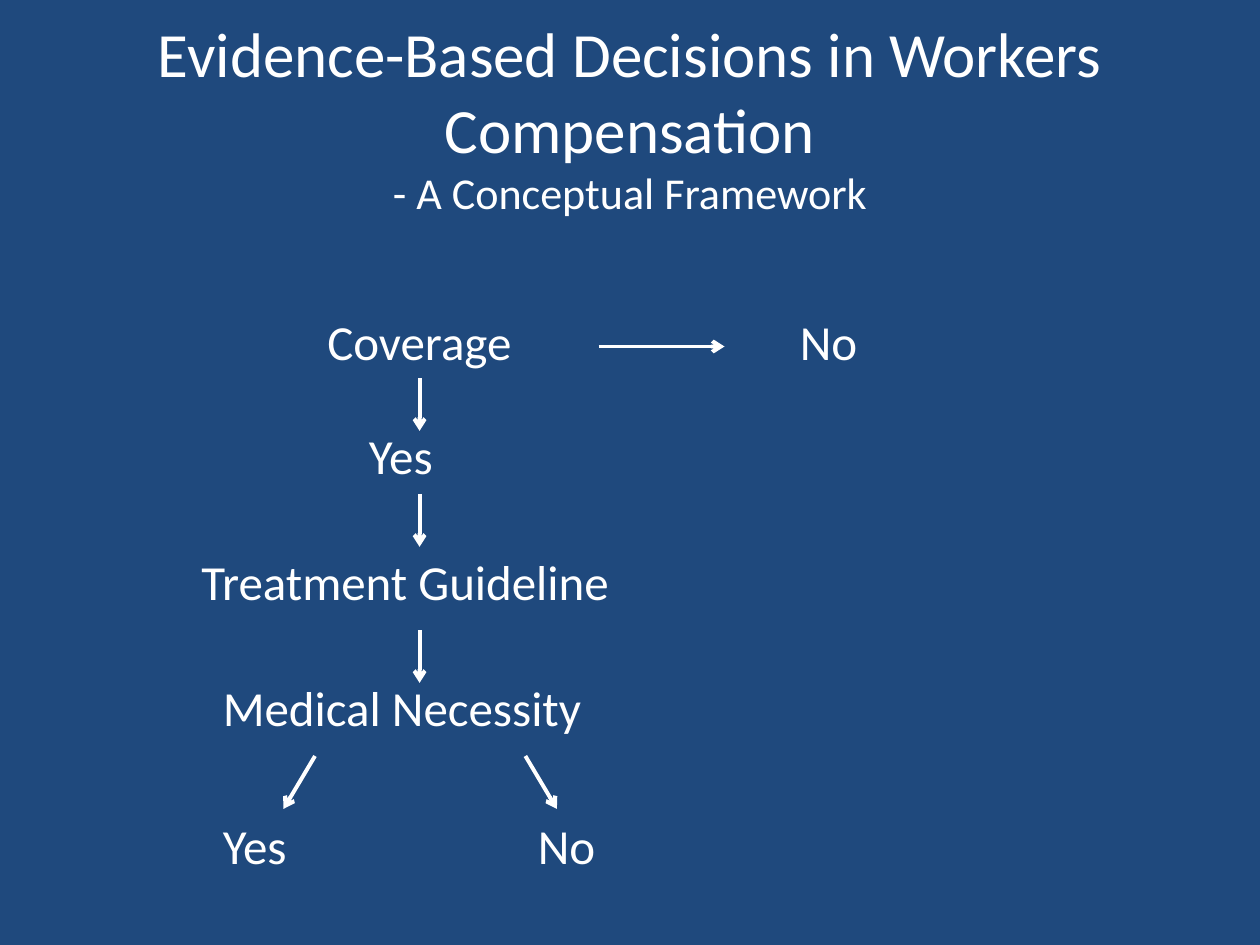
from lxml.etree import SubElement
from pptx import Presentation
from pptx.dml.color import RGBColor
from pptx.enum.shapes import MSO_CONNECTOR
from pptx.enum.text import MSO_ANCHOR, MSO_AUTO_SIZE, PP_ALIGN
from pptx.oxml.ns import qn
from pptx.util import Inches, Pt

THEME = {
    "back": RGBColor(0x1F, 0x49, 0x7D),
    "ink": RGBColor(0xFF, 0xFF, 0xFF),
    "font": "Calibri",
    "title": 36,
    "sub": 25.2,
    "body": 28,
    "line": 2.25,
}
TITLE = "Evidence-Based Decisions in Workers Compensation"
SUB = "- A Conceptual Framework"
HEIGHT = 0.57
STEM = 3.33
DROP = 0.42

LABELS = [
    ("Coverage", 2.5, 2.42, 2.17),
    ("No", 6.25, 2.42, 2.17),
    ("Yes", 2.83, 3.33, 1),
    ("No", 4.17, 6.42, 2.17),
    ("Yes", 1.67, 6.42, 2.17),
    ("Treatment Guideline", 1.5, 4.33, 4),
    ("Medical Necessity", 1.67, 5.33, 4.42),
]
ARROWS = [
    (4.75, 2.75, 1, 0),
    (STEM, 3, 0, DROP),
    (2.5, 6, -0.25, DROP),
    (4.17, 6, 0.25, DROP),
    (STEM, 3.92, 0, DROP),
    (STEM, 5, 0, DROP),
]


def format_all(item, values):
    for name, value in values.items():
        setattr(item, name, value)


def add_run(para, text, size):
    run = para.add_run()
    run.text = text
    format_all(run.font, {"name": THEME["font"], "size": Pt(size)})
    run.font.color.rgb = THEME["ink"]


def add_title(slide):
    shape = slide.shapes.title
    format_all(shape, {"left": Inches(0.5), "top": Inches(0.3),
                       "width": Inches(9), "height": Inches(1.25)})
    frame = shape.text_frame
    format_all(frame, {"word_wrap": True, "auto_size": MSO_AUTO_SIZE.NONE,
                       "vertical_anchor": MSO_ANCHOR.MIDDLE})
    para = frame.paragraphs[0]
    para.alignment = PP_ALIGN.CENTER
    add_run(para, TITLE, THEME["title"])
    para.add_line_break()
    gap = para._p.find(qn("a:br"))
    SubElement(gap, qn("a:rPr"), sz=str(THEME["title"] * 100))
    add_run(para, SUB, THEME["sub"])


def add_label(slide, text, left, top, width):
    box = slide.shapes.add_textbox(*map(Inches, (left, top, width, HEIGHT)))
    frame = box.text_frame
    format_all(frame, {"word_wrap": True,
                       "auto_size": MSO_AUTO_SIZE.SHAPE_TO_FIT_TEXT})
    add_run(frame.paragraphs[0], text, THEME["body"])


def add_arrow(slide, left, top, across, down):
    ends = map(Inches, (left, top, left + across, top + down))
    arrow = slide.shapes.add_connector(MSO_CONNECTOR.STRAIGHT, *ends)
    arrow.line.color.rgb = THEME["ink"]
    arrow.line.width = Pt(THEME["line"])
    SubElement(arrow.line._get_or_add_ln(), qn("a:tailEnd"), type="arrow")
    SubElement(arrow._element.spPr, qn("a:effectLst"))


def main():
    deck = Presentation()
    format_all(deck, {"slide_width": Inches(10), "slide_height": Inches(7.5)})
    slide = deck.slides.add_slide(deck.slide_layouts[5])
    fill = slide.background.fill
    fill.solid()
    fill.fore_color.rgb = THEME["back"]
    add_title(slide)
    for label in LABELS:
        add_label(slide, *label)
    for arrow in ARROWS:
        add_arrow(slide, *arrow)
    deck.save("out.pptx")


if __name__ == "__main__":
    main()
